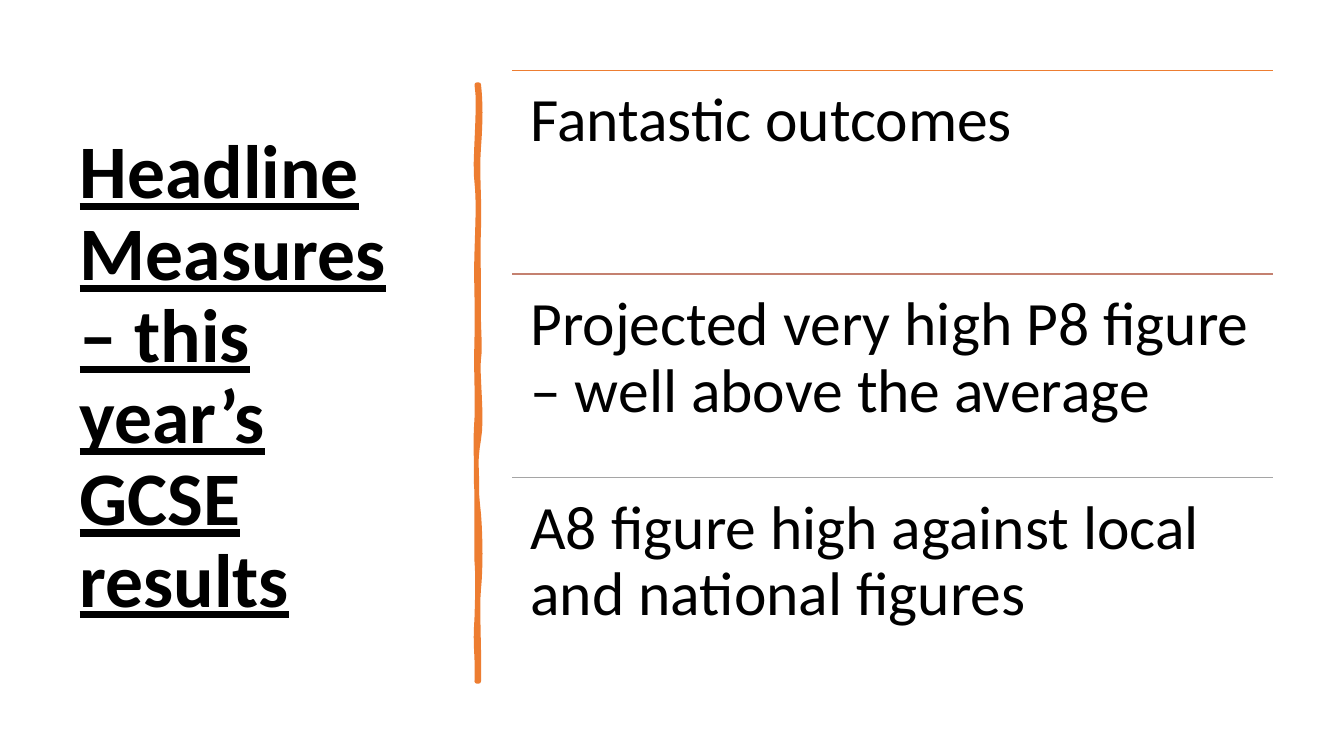
import dataclasses

import pptx
import pptx.dml.color
import pptx.enum.shapes
import pptx.enum.text
import pptx.oxml.ns
import pptx.util
from lxml import etree

Pt = pptx.util.Pt


@dataclasses.dataclass(frozen=True)
class Theme:
    font: str = "Calibri"
    text: str = "000000"
    accent: str = "ED7D31"
    rule_colors: tuple = ("ED7D31", "C48170", "A5A5A5")
    title_size: float = 54
    body_size: float = 44
    line_spacing: float = 0.9
    rule_width: float = 1
    brush_width: float = 3.25


class SlideBuilder:
    def __init__(self, slide, theme):
        self.slide = slide
        self.theme = theme

    def color(self, value):
        return pptx.dml.color.RGBColor.from_string(value)

    def add_text(self, frame, text, size, bold=False, underline=False):
        paragraph = frame.paragraphs[0]
        paragraph.alignment = pptx.enum.text.PP_ALIGN.LEFT
        paragraph.line_spacing = self.theme.line_spacing
        run = paragraph.add_run()
        run.text = text
        run.font.name = self.theme.font
        run.font.size = Pt(size)
        run.font.bold = bold
        run.font.underline = underline
        run.font.color.rgb = self.color(self.theme.text)

    def title(self, text, left, top, width, height):
        shape = self.slide.shapes.title
        shape.left, shape.top = Pt(left), Pt(top)
        shape.width, shape.height = Pt(width), Pt(height)
        frame = shape.text_frame
        frame.word_wrap = True
        frame.auto_size = pptx.enum.text.MSO_AUTO_SIZE.NONE
        frame.vertical_anchor = pptx.enum.text.MSO_ANCHOR.MIDDLE
        self.add_text(frame, text, self.theme.title_size, bold=True, underline=True)

    def text_box(self, text, left, top, width, height, inset):
        shape = self.slide.shapes.add_textbox(Pt(left), Pt(top), Pt(width), Pt(height))
        frame = shape.text_frame
        frame.word_wrap = True
        frame.margin_left = frame.margin_right = Pt(inset)
        frame.margin_top = frame.margin_bottom = Pt(inset)
        self.add_text(frame, text, self.theme.body_size)

    def rule(self, left, top, width, color):
        connector = self.slide.shapes.add_connector(
            pptx.enum.shapes.MSO_CONNECTOR.STRAIGHT,
            Pt(left), Pt(top), Pt(left + width), Pt(top))
        connector.line.color.rgb = self.color(color)
        connector.line.width = Pt(self.theme.rule_width)
        properties = connector._element.spPr
        etree.SubElement(properties, pptx.oxml.ns.qn("a:effectLst"))

    def brush_stroke(self, points):
        points = [(Pt(x), Pt(y)) for x, y in points]
        builder = self.slide.shapes.build_freeform(*points[0])
        builder.add_line_segments(points[1:], close=True)
        shape = builder.convert_to_shape()
        shape.shadow.inherit = False
        shape.fill.solid()
        shape.fill.fore_color.rgb = self.color(self.theme.accent)
        shape.line.color.rgb = self.color(self.theme.accent)
        shape.line.width = Pt(self.theme.brush_width)


def curved_edge(x, start_y, bends, steps=8):
    """Sample cubic curves whose ends all lie on the vertical at x."""
    points = [(x, start_y)]
    for first_x, first_y, second_x, second_y, end_y in bends:
        start_y = points[-1][1]
        for step in range(1, steps + 1):
            t = step / steps
            weights = ((1 - t) ** 3, 3 * t * (1 - t) ** 2, 3 * t * t * (1 - t), t ** 3)
            xs = (x, first_x, second_x, x)
            ys = (start_y, first_y, second_y, end_y)
            points.append((sum(w * v for w, v in zip(weights, xs)),
                           sum(w * v for w, v in zip(weights, ys))))
    return points


# Divider edges: two control points and the end height of each bend
DIVIDER_TOP, DIVIDER_BOTTOM = 60.5, 486.7
RIGHT_BENDS = (
    (343.4, 73.4, 343.4, 85.7, 105.1),
    (340.6, 124.6, 342.7, 140.4, 162.7),
    (341.3, 185, 342, 188.6, 211.7),
    (341.3, 234, 343.4, 246.2, 256.3),
    (340.6, 266.4, 344.9, 298.1, 313.9),
    (339.1, 329, 339.8, 348.5, 367.2),
    (343.4, 385.9, 343.4, 406.1, 420.5),
    (340.6, 434.2, 342.7, 468, DIVIDER_BOTTOM),
)
LEFT_BENDS = (
    (341.3, 465.1, 339.1, 463.7, 441.4),
    (341.3, 419.8, 341.3, 410.4, 401),
    (340.6, 391.7, 340.6, 356.4, 343.4),
    (340.6, 330.5, 339.1, 320.4, 298.8),
    (341.3, 277.9, 339.8, 268.6, 241.2),
    (341.3, 214.6, 339.8, 202.3, 180),
    (341.3, 157, 342, 144, 130.3),
    (338.4, 117.4, 343.4, 74.9, DIVIDER_TOP),
)

MEASURES = (
    "Fantastic outcomes",
    "Projected very high P8 figure – well above the average",
    "A8 figure high against local and national figures",
)
LIST_LEFT, LIST_TOP, LIST_WIDTH, ROW_HEIGHT = 365.8, 50.4, 543.6, 145.4
ROW_INSET = 13


def main():
    presentation = pptx.Presentation()
    presentation.slide_width, presentation.slide_height = Pt(960), Pt(540)
    slide = presentation.slides.add_slide(presentation.slide_layouts[5])
    theme = Theme()
    builder = SlideBuilder(slide, theme)

    # Title
    builder.title("Headline Measures – this year’s GCSE results", 49.7, 50.4, 269.3, 440)

    # Hand-drawn divider
    builder.brush_stroke(curved_edge(342, DIVIDER_TOP, RIGHT_BENDS)
                         + curved_edge(340.6, DIVIDER_BOTTOM, LEFT_BENDS))

    # Measures, each under its own rule
    for row, (measure, color) in enumerate(zip(MEASURES, theme.rule_colors)):
        top = LIST_TOP + row * ROW_HEIGHT
        builder.rule(LIST_LEFT, top, LIST_WIDTH, color)
        builder.text_box(measure, LIST_LEFT, top, LIST_WIDTH, ROW_HEIGHT, ROW_INSET)

    presentation.save("out.pptx")


if __name__ == "__main__":
    main()
